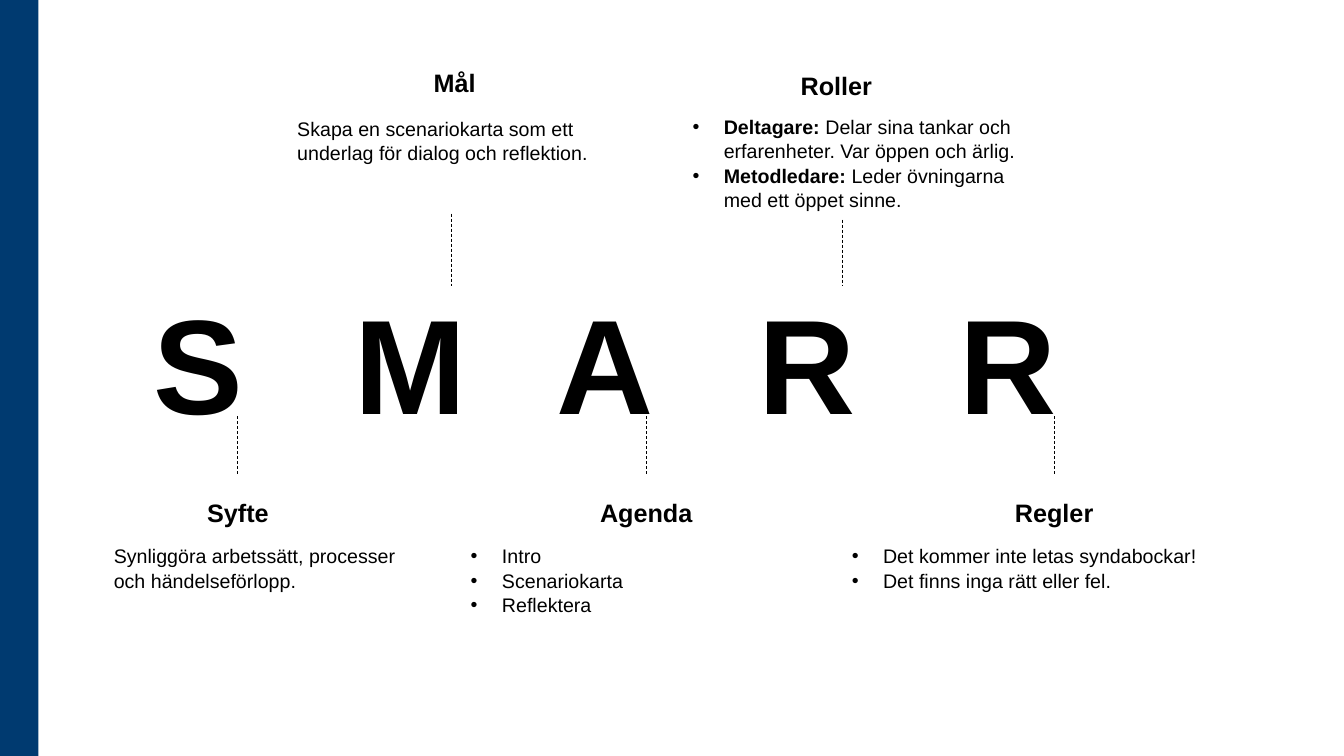
from dataclasses import dataclass

from lxml import etree
from pptx import Presentation
from pptx.dml.color import RGBColor
from pptx.enum.dml import MSO_LINE
from pptx.enum.shapes import MSO_CONNECTOR, MSO_SHAPE
from pptx.enum.text import PP_ALIGN
from pptx.oxml.ns import qn
from pptx.util import Inches, Pt

DASH = MSO_LINE.DASH
STRAIGHT = MSO_CONNECTOR.STRAIGHT
RECT = MSO_SHAPE.RECTANGLE
LEFT, CENTER = PP_ALIGN.LEFT, PP_ALIGN.CENTER


@dataclass(frozen=True)
class Theme:
    """Colours, font and type sizes of the slide."""
    ink: RGBColor = RGBColor(0, 0, 0)
    navy: RGBColor = RGBColor(0x00, 0x3A, 0x70)
    font: str = "Arial"
    giant: int = 96
    head: int = 18
    body: int = 14


class Board:
    """Draws the elements of one slide in one theme."""

    def __init__(self, slide, theme):
        self.shapes = slide.shapes
        self.theme = theme

    def band(self, x, y, w, h):
        """Draw a solid band."""
        band = self.shapes.add_shape(RECT, *map(Inches, (x, y, w, h)))
        band.shadow.inherit = False
        band.fill.solid()
        band.fill.fore_color.rgb = self.theme.navy
        band.line.fill.background()

    def rule(self, x, top, end):
        """Draw a thin dashed vertical line."""
        rule = self.shapes.add_connector(STRAIGHT, *map(Inches, (x, top, x, end)))
        rule.line.color.rgb = self.theme.ink
        rule.line.width = Pt(0.5)
        rule.line.dash_style = DASH
        etree.SubElement(rule._element.spPr, qn("a:effectLst"))

    def text(self, box, paras, size, bold=False, align=LEFT, bullet=False, inset=(0.1, 0.05), tabs=()):
        """Write paragraphs, each a list of (text, bold) runs or a string."""
        frame = self.shapes.add_textbox(*map(Inches, box)).text_frame
        left, top = map(Inches, inset)
        form = {"word_wrap": True, "margin_left": left, "margin_top": top}
        for name, value in form.items():
            setattr(frame, name, value)
        for i, runs in enumerate(paras):
            para = frame.add_paragraph() if i else frame.paragraphs[0]
            para.alignment = align
            para.line_spacing = 1.04
            if bullet:
                self.bullet(para)
            if tabs:
                self.tabs(para, tabs)
            for words, heavy in [(runs, bold)] if isinstance(runs, str) else runs:
                run = para.add_run()
                run.text = words
                form = {"name": self.theme.font, "size": Pt(size), "bold": heavy}
                for name, value in form.items():
                    setattr(run.font, name, value)
                run.font.color.rgb = self.theme.ink

    def bullet(self, para):
        """Give a paragraph a hanging bullet."""
        props = para._p.get_or_add_pPr()
        props.set("marL", str(Inches(0.31)))
        props.set("indent", str(-Inches(0.31)))
        etree.SubElement(props, qn("a:buFont"), typeface=self.theme.font)
        etree.SubElement(props, qn("a:buChar"), char="•")

    def tabs(self, para, stops):
        """Give a paragraph left tab stops."""
        group = etree.SubElement(para._p.get_or_add_pPr(), qn("a:tabLst"))
        for stop in stops:
            etree.SubElement(group, qn("a:tab"), pos=str(Inches(stop)), algn="l")


def main():
    """Build and save the slide."""
    deck = Presentation()
    deck.slide_width, deck.slide_height = Inches(13.33), Inches(7.5)
    theme = Theme()
    board = Board(deck.slides.add_slide(deck.slide_layouts[6]), theme)

    board.band(0, 0, 0.38, 7.5)
    board.text((-0.26, 2.61, 13.33, 1.72), ["\t".join("SMARR")], theme.giant, bold=True,
               inset=(1.78, 0.11), tabs=range(2, 10, 2))

    for x, top, end in [(2.35, 4.13, 4.7), (4.48, 2.12, 2.84), (6.41, 4.13, 4.7),
                        (8.35, 2.18, 2.84), (10.46, 4.13, 4.7)]:
        board.rule(x, top, end)

    for x, y, w, title in [(1.21, 4.87, 2.3, "Syfte"), (3.38, 0.61, 2.26, "Mål"),
                           (5.26, 4.87, 2.3, "Agenda"), (6.44, 0.64, 3.71, "Roller"),
                           (9.2, 4.87, 2.51, "Regler")]:
        board.text((x, y, w, 0.4), [title], theme.head, bold=True, align=CENTER)

    roles = [
        [("Deltagare: ", True), ("Delar sina tankar och erfarenheter. Var öppen och ärlig.", False)],
        [("Metodledare: ", True), ("Leder övningarna med ett öppet sinne.", False)],
    ]
    rules = ["Det kommer inte letas syndabockar!", "Det finns inga rätt eller fel."]
    for box, paras, bullet in [
        ((1.03, 5.34, 3.22, 0.57), ["Synliggöra arbetssätt, processer och händelseförlopp."], False),
        ((2.85, 1.1, 3.47, 0.57), ["Skapa en scenariokarta som ett underlag för dialog och reflektion."], False),
        ((4.57, 5.34, 3.85, 0.81), ["Intro", "Scenariokarta", "Reflektera"], True),
        ((6.77, 1.08, 3.71, 1.51), roles, True),
        ((8.35, 5.34, 4.31, 0.57), rules, True),
    ]:
        board.text(box, paras, theme.body, bullet=bullet)

    deck.save("out.pptx")


if __name__ == "__main__":
    main()
